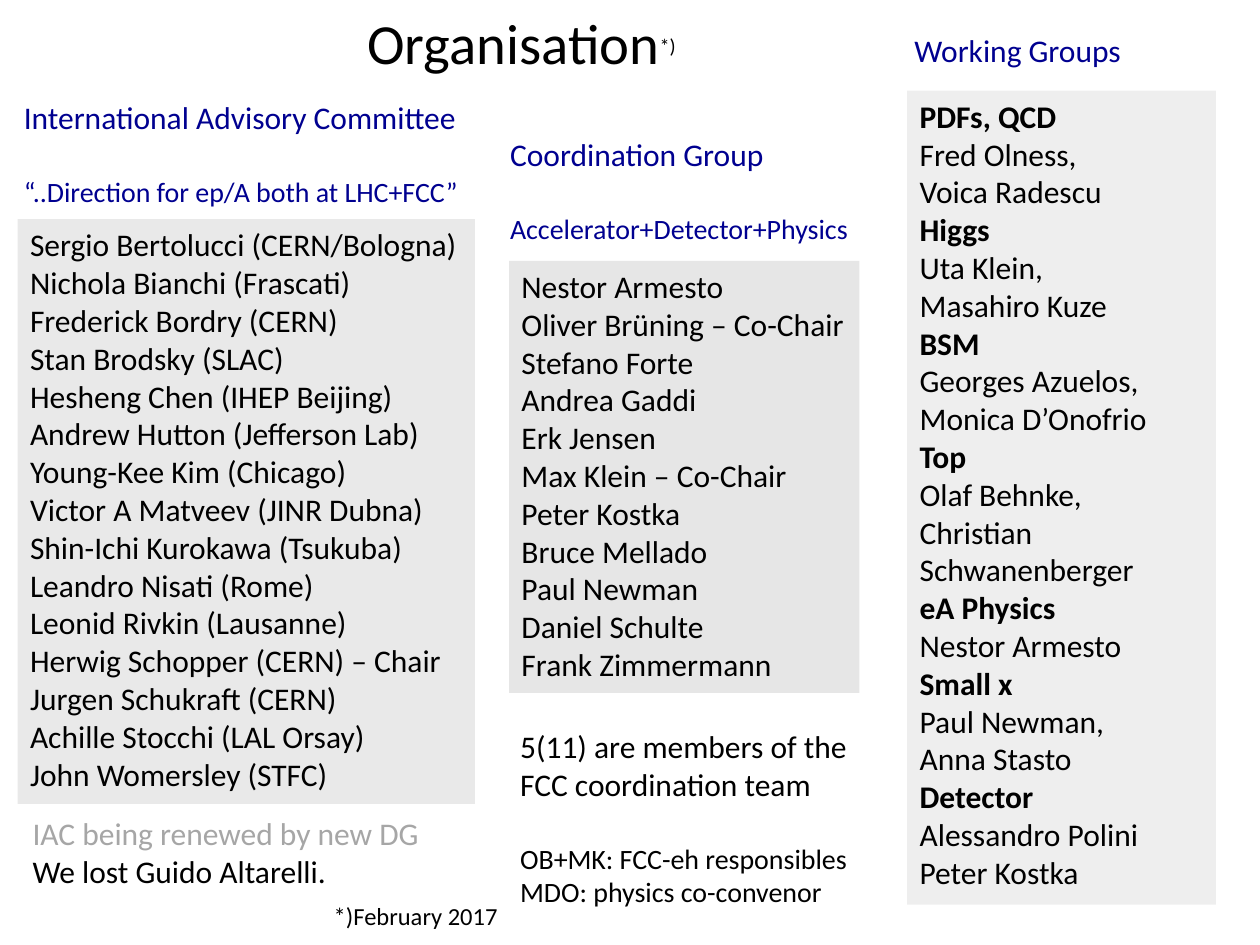
"""Build the organisation slide: committee, coordination group and working groups."""
from lxml import etree
from pptx import Presentation
from pptx import util as u
from pptx.dml.color import RGBColor
from pptx.enum import shapes, text
from pptx.oxml.ns import qn

PX = 9144
INK = {"black": "000000", "navy": "000090", "grey": "A6A6A6",
       "light": "D9D9D9", "mid": "BFBFBF"}

deck = Presentation()
deck.slide_width, deck.slide_height = 1000 * PX, 750 * PX
slide = deck.slides.add_slide(deck.slide_layouts[6])


def add_run(para, words, size, ink="black", bold=False):
    run = para.add_run()
    run.text = words
    run.font.name = "Calibri"
    run.font.size = u.Pt(size)
    run.font.bold = bold
    run.font.color.rgb = RGBColor.from_string(INK[ink])
    return run


def fill_text(shape, lines, wrap=False):
    frame = shape.text_frame
    frame.word_wrap = wrap
    frame.auto_size = text.MSO_AUTO_SIZE.SHAPE_TO_FIT_TEXT
    frame.vertical_anchor = text.MSO_ANCHOR.TOP
    for i, (words, size, ink, bold, gap) in enumerate(lines):
        para = frame.paragraphs[0] if i == 0 else frame.add_paragraph()
        para.alignment = text.PP_ALIGN.LEFT
        para.space_before = u.Pt(gap)
        add_run(para, words, size, ink, bold)


title = slide.shapes.add_textbox(75 * PX, 5 * PX, 678 * PX, 56 * PX)
title.text_frame.word_wrap = True
title.text_frame.vertical_anchor = text.MSO_ANCHOR.MIDDLE
head = title.text_frame.paragraphs[0]
head.alignment = text.PP_ALIGN.CENTER
add_run(head, "Organisation", 32.4)
mark = add_run(head, "*)", 19.8)
mark._r.get_or_add_rPr().set("baseline", "30000")

board = [
    "Sergio Bertolucci (CERN/Bologna)", "Nichola Bianchi (Frascati)",
    "Frederick Bordry (CERN)", "Stan Brodsky (SLAC)",
    "Hesheng Chen (IHEP Beijing)", "Andrew Hutton (Jefferson Lab)",
    "Young-Kee Kim (Chicago)", "Victor A Matveev (JINR Dubna)",
    "Shin-Ichi Kurokawa (Tsukuba)", "Leandro Nisati (Rome)",
    "Leonid Rivkin (Lausanne)", "Herwig Schopper (CERN) – Chair",
    "Jurgen Schukraft (CERN)", "Achille Stocchi (LAL Orsay)",
    "John Womersley (STFC)",
]
team = [
    "Nestor Armesto", "Oliver Brüning – Co-Chair", "Stefano Forte",
    "Andrea Gaddi", "Erk Jensen", "Max Klein – Co-Chair", "Peter Kostka",
    "Bruce Mellado", "Paul Newman", "Daniel Schulte", "Frank Zimmermann",
]
groups = {
    "PDFs, QCD": ["Fred Olness,", "Voica Radescu"],
    "Higgs": ["Uta Klein,", "Masahiro Kuze"],
    "BSM": ["Georges Azuelos,", "Monica D’Onofrio"],
    "Top": ["Olaf Behnke,", "Christian Schwanenberger"],
    "eA Physics": ["Nestor Armesto"],
    "Small x": ["Paul Newman,", "Anna Stasto"],
    "Detector": ["Alessandro Polini", "Peter Kostka"],
}
roster = [name for topic, people in groups.items() for name in [topic, *people]]

panels = [
    ((14, 174, 363, 464), "light", 57, False, board),
    ((404, 207, 278, 343), "mid", 38, True, team),
    ((720, 72, 245, 646), "grey", 18, True, roster),
]
for box, ink, alpha, wrap, names in panels:
    panel = slide.shapes.add_shape(shapes.MSO_SHAPE.RECTANGLE, *[n * PX for n in box])
    panel.shadow.inherit = False
    panel.line.fill.background()
    panel.fill.solid()
    panel.fill.fore_color.rgb = RGBColor.from_string(INK[ink])
    tint = panel._element.spPr.find(qn("a:solidFill"))[0]
    etree.SubElement(tint, qn("a:alpha")).set("val", str(alpha * 1000))
    fill_text(panel, [(name, 18, "black", name in groups, 0) for name in names], wrap)

notes = [
    ((9, 73, 372, 98), [
        ("International Advisory Committee", 18, "navy", False, 0),
        ("“..Direction for ep/A both at LHC+FCC”", 16, "navy", False, 22)]),
    ((395, 102, 294, 98), [
        ("Coordination Group", 18, "navy", False, 0),
        ("Accelerator+Detector+Physics", 16, "navy", False, 22)]),
    ((403, 572, 283, 155), [
        ("5(11) are members of the", 18, "black", False, 0),
        ("FCC coordination team", 18, "black", False, 0),
        ("OB+MK: FCC-eh responsibles", 16, "black", False, 22),
        ("MDO: physics co-convenor", 16, "black", False, 0)]),
    ((716, 20, 187, 40), [("Working Groups", 18, "navy", False, 0)]),
    ((255, 710, 152, 34), [("*)February 2017", 14, "black", False, 0)]),
    ((16, 641, 331, 71), [
        ("IAC being renewed by new DG", 18, "grey", False, 0),
        ("We lost Guido Altarelli.", 18, "black", False, 0)]),
]
for box, lines in notes:
    fill_text(slide.shapes.add_textbox(*[n * PX for n in box]), lines)

deck.save("out.pptx")
